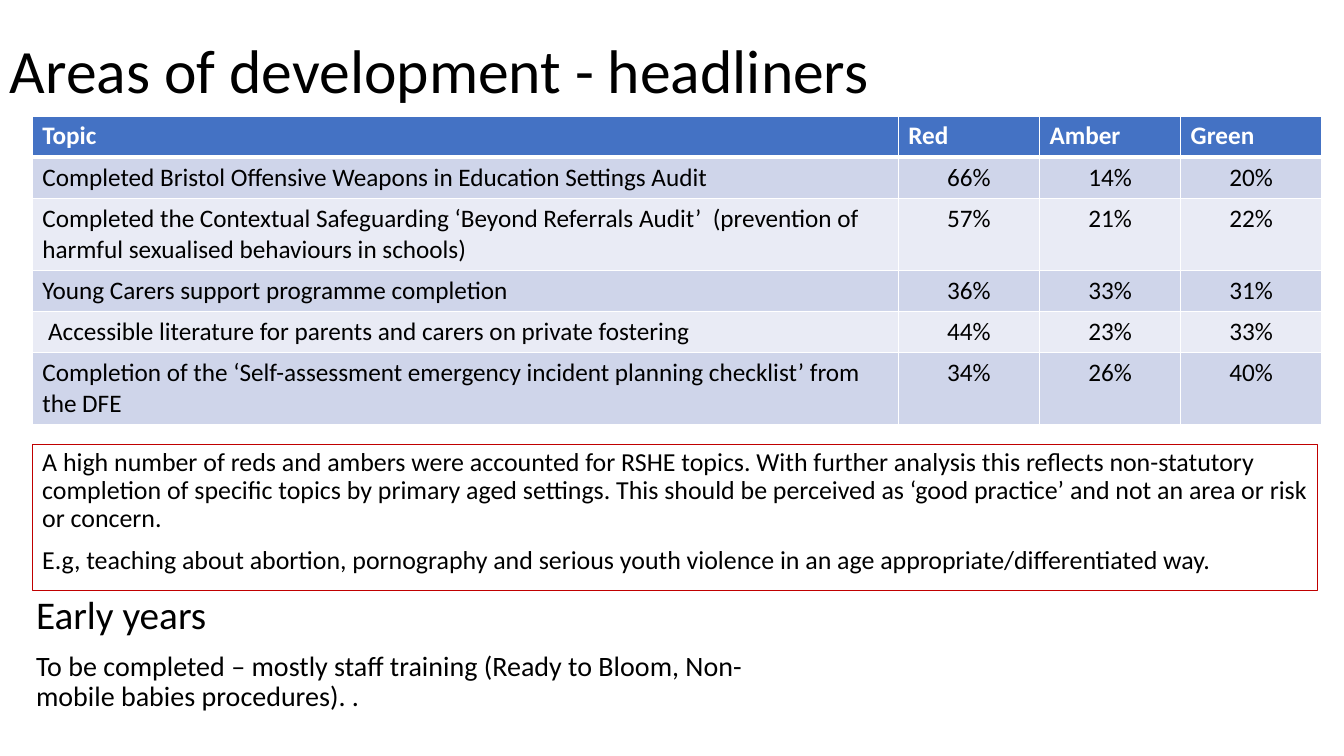
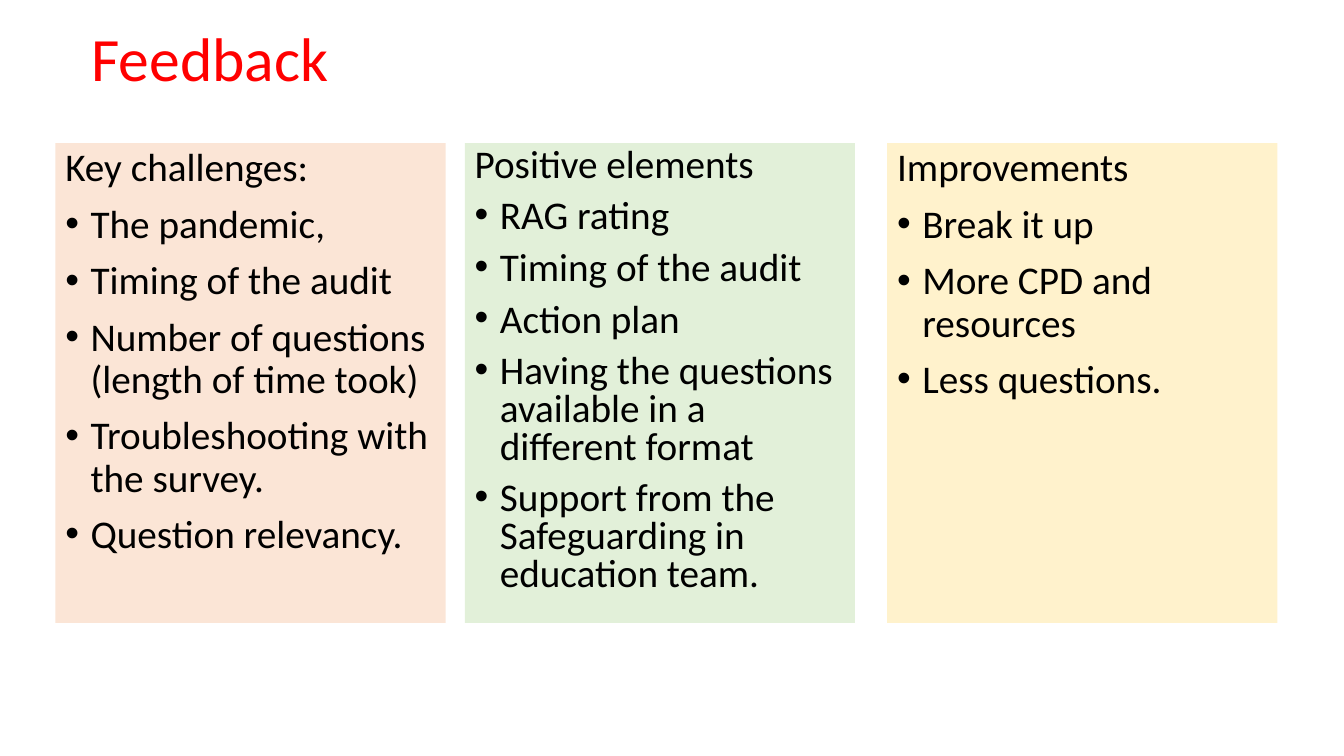
from dataclasses import dataclass

import lxml.etree
import pptx
import pptx.dml.color
import pptx.enum.shapes
import pptx.enum.text
import pptx.oxml.ns
import pptx.util

Inches = pptx.util.Inches
Pt = pptx.util.Pt
qn = pptx.oxml.ns.qn

FONT = "Calibri"
BLACK, WHITE, RED = "000000", "FFFFFF", "FF0000"
HEADER_FILL = "4472C4"
BAND_FILLS = ("CFD5EA", "E9EBF5")
NOTE_LINE = "C00000"
ROW_HEIGHT, TALL_ROW_HEIGHT = 0.41, 0.71
COLUMN_WIDTHS = (8.59, 1.4, 1.4, 1.4)


@dataclass(frozen=True)
class Area:
    left: float
    top: float
    width: float
    height: float

    def lengths(self) -> tuple:
        return tuple(Inches(n) for n in (self.left, self.top, self.width, self.height))


@dataclass(frozen=True)
class Line:
    text: str
    size: float
    bullet: bool = False


@dataclass(frozen=True)
class Topic:
    name: str
    red: int
    amber: int
    green: int
    height: float = ROW_HEIGHT


@dataclass(frozen=True)
class Panel:
    left: float
    fill: str
    heading: str
    points: tuple[str, ...]
    spacing: float = 0.9


TOPICS = (
    Topic("Completed Bristol Offensive Weapons in Education Settings Audit", 66, 14, 20),
    Topic("Completed the Contextual Safeguarding ‘Beyond Referrals Audit’  (prevention of "
          "harmful sexualised behaviours in schools)", 57, 21, 22, TALL_ROW_HEIGHT),
    Topic("Young Carers support programme completion", 36, 33, 31),
    Topic(" Accessible literature for parents and carers on private fostering", 44, 23, 33),
    Topic("Completion of the ‘Self-assessment emergency incident planning checklist’ from "
          "the DFE", 34, 26, 40, TALL_ROW_HEIGHT),
)

NOTE = (
    Line("A high number of reds and ambers were accounted for RSHE topics. With further "
         "analysis this reflects non-statutory completion of specific topics by primary aged "
         "settings. This should be perceived as ‘good practice’ and not an area or risk or "
         "concern.", 18.5),
    Line("E.g, teaching about abortion, pornography and serious youth violence in an age "
         "appropriate/differentiated way.", 18.5),
)

EARLY_YEARS = (
    Line("Early years", 28),
    Line("To be completed – mostly staff training (Ready to Bloom, Non-mobile babies "
         "procedures). .", 20),
)

PANELS = (
    Panel(0.55, "FBE5D6", "Key challenges:",
          ("The pandemic,", "Timing of the audit", "Number of questions (length of time took)",
           "Troubleshooting with the survey.", "Question relevancy.")),
    Panel(4.61, "E2F0D9", "Positive elements",
          ("RAG rating", "Timing of the audit", "Action plan",
           "Having the questions available in a different format",
           "Support from the Safeguarding in education team."), 0.8),
    Panel(8.8, "FFF2CC", "Improvements",
          ("Break it up", "More CPD and resources", "Less questions.")),
)


def rgb(value: str) -> pptx.dml.color.RGBColor:
    return pptx.dml.color.RGBColor.from_string(value)


def style_font(font, size: float, color: str, bold: bool = False) -> None:
    font.name = FONT
    font.size = Pt(size)
    font.bold = bold
    font.color.rgb = rgb(color)


def add_bullet(para) -> None:
    properties = para._p.get_or_add_pPr()
    properties.set("marL", str(Inches(0.25)))
    properties.set("indent", str(Inches(-0.25)))
    face = lxml.etree.SubElement(properties, qn("a:buFont"))
    face.set("typeface", "Arial")
    mark = lxml.etree.SubElement(properties, qn("a:buChar"))
    mark.set("char", "•")


def write_lines(frame, lines: tuple[Line, ...], color: str = BLACK,
                spacing: float = 0.9) -> None:
    frame.word_wrap = True
    frame.text = "\n".join(line.text for line in lines)
    for index, (para, line) in enumerate(zip(frame.paragraphs, lines)):
        if line.bullet:
            add_bullet(para)
        para.alignment = pptx.enum.text.PP_ALIGN.LEFT
        para.line_spacing = spacing
        para.space_before = Pt(10 if index else 0)
        for span in para.runs:
            style_font(span.font, line.size, color)


def add_text(page, area: Area, lines: tuple[Line, ...], color: str = BLACK):
    box = page.shapes.add_textbox(*area.lengths())
    write_lines(box.text_frame, lines, color)
    return box


def add_title(page, area: Area, text: str, color: str = BLACK) -> None:
    box = add_text(page, area, (Line(text, 44),), color)
    box.text_frame.vertical_anchor = pptx.enum.text.MSO_ANCHOR.MIDDLE


def add_rectangle(page, area: Area, lines: tuple[Line, ...], fill: str = "",
                  outline: str = "", spacing: float = 0.9) -> None:
    box = page.shapes.add_shape(pptx.enum.shapes.MSO_SHAPE.RECTANGLE, *area.lengths())
    box.shadow.inherit = False
    if fill:
        box.fill.solid()
        box.fill.fore_color.rgb = rgb(fill)
    else:
        box.fill.background()
    if outline:
        box.line.color.rgb = rgb(outline)
        box.line.width = Pt(0.75)
    else:
        box.line.fill.background()
    box.text_frame.vertical_anchor = pptx.enum.text.MSO_ANCHOR.TOP
    write_lines(box.text_frame, lines, spacing=spacing)


def add_borders(cell, top: float, bottom: float) -> None:
    """Draw white cell borders; top and bottom are widths in points."""
    properties = cell._tc.get_or_add_tcPr()
    for side, width in (("L", 1), ("R", 1), ("T", top), ("B", bottom)):
        border = lxml.etree.SubElement(properties, qn(f"a:ln{side}"))
        border.set("w", str(Pt(width)))
        fill = lxml.etree.SubElement(border, qn("a:solidFill"))
        lxml.etree.SubElement(fill, qn("a:srgbClr")).set("val", WHITE)


def fill_cell(cell, text: str, row: int, column: int) -> None:
    header = row == 0
    add_borders(cell, top=3 if row == 1 else 1, bottom=3 if header else 1)
    cell.fill.solid()
    cell.fill.fore_color.rgb = rgb(HEADER_FILL if header else BAND_FILLS[(row - 1) % 2])
    cell.text_frame.text = text
    para = cell.text_frame.paragraphs[0]
    if column and not header:
        para.alignment = pptx.enum.text.PP_ALIGN.CENTER
    for span in para.runs:
        style_font(span.font, 18, WHITE if header else BLACK, bold=header)


def add_ratings_table(page) -> None:
    rows = [("Topic", "Red", "Amber", "Green")]
    rows += [(topic.name, f"{topic.red}%", f"{topic.amber}%", f"{topic.green}%")
             for topic in TOPICS]
    heights = [ROW_HEIGHT] + [topic.height for topic in TOPICS]
    area = Area(0.32, 1.15, sum(COLUMN_WIDTHS), sum(heights))
    table = page.shapes.add_table(len(rows), len(COLUMN_WIDTHS), *area.lengths()).table
    for column, width in zip(table.columns, COLUMN_WIDTHS):
        column.width = Inches(width)
    for row_index, (texts, height) in enumerate(zip(rows, heights)):
        table.rows[row_index].height = Inches(height)
        for column_index, text in enumerate(texts):
            fill_cell(table.cell(row_index, column_index), text, row_index, column_index)


def add_panel(page, panel: Panel) -> None:
    lines = (Line(panel.heading, 28),) + tuple(Line(text, 28, True) for text in panel.points)
    add_rectangle(page, Area(panel.left, 1.42, 3.87, 4.76), lines, fill=panel.fill,
                  spacing=panel.spacing)


def build_development_page(page) -> None:
    add_title(page, Area(0, 0, 11.5, 1.45), "Areas of development - headliners")
    add_text(page, Area(0.26, 5.86, 7.73, 1.45), EARLY_YEARS)
    add_ratings_table(page)
    add_rectangle(page, Area(0.32, 4.41, 12.75, 1.45), NOTE, outline=NOTE_LINE)


def build_feedback_page(page) -> None:
    add_title(page, Area(0.81, 0.22, 10.9, 0.78), "Feedback", RED)
    for panel in PANELS:
        add_panel(page, panel)


def main() -> None:
    deck = pptx.Presentation()
    deck.slide_width = Inches(13.33)
    deck.slide_height = Inches(7.5)
    for build_page in (build_development_page, build_feedback_page):
        build_page(deck.slides.add_slide(deck.slide_layouts[6]))
    deck.save("out.pptx")


if __name__ == "__main__":
    main()
